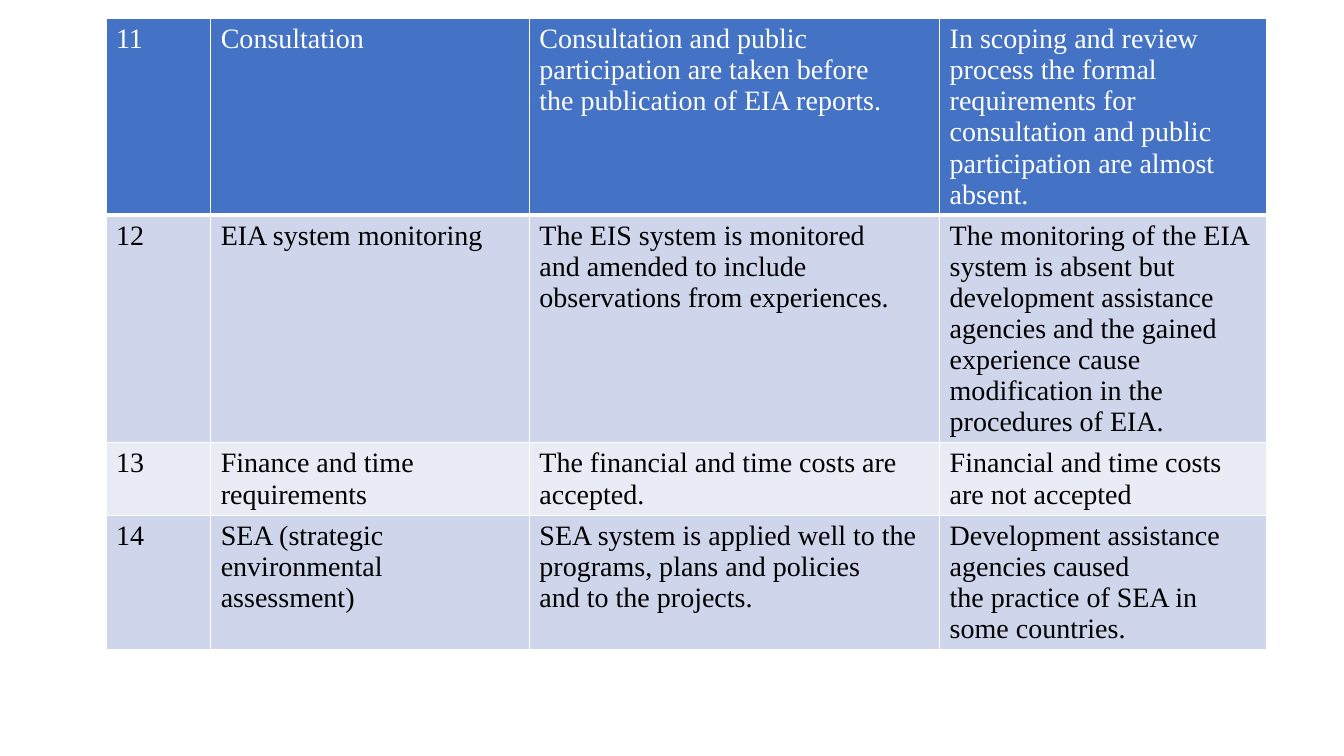
from pptx import Presentation
from pptx.dml.color import RGBColor
from pptx.oxml.ns import qn
from pptx.util import Cm, Pt
from lxml.etree import SubElement

COLOURS = {
    "header": "4472C4",
    "dark_band": "CFD5EA",
    "light_band": "E9EBF5",
    "white": "FFFFFF",
    "black": "000000",
}
FONT = "Times New Roman"
COLUMN_WIDTHS = [2.64, 8.03, 10.34, 8.23]
ROW_HEIGHTS = [4.9, 5.7, 1.8, 3.35]
ROWS = [
    [
        ["11"],
        ["Consultation"],
        ["Consultation and public", "participation are taken before",
         "the publication of EIA reports."],
        ["In scoping and review process the formal",
         "requirements for consultation and public",
         "participation are almost absent."],
    ],
    [
        ["12"],
        ["EIA system monitoring"],
        ["The EIS system is monitored", "and amended to include",
         "observations from experiences."],
        ["The monitoring of the EIA system is absent but development assistance",
         "agencies and the gained experience cause",
         "modification in the procedures of EIA."],
    ],
    [
        ["13"],
        ["Finance and time", "requirements"],
        ["The financial and time costs are", "accepted."],
        ["Financial and time costs are not accepted"],
    ],
    [
        ["14"],
        ["SEA (strategic", "environmental", "assessment)"],
        ["SEA system is applied well to the", "programs, plans and policies",
         "and to the projects."],
        ["Development assistance agencies caused",
         "the practice of SEA in some countries."],
    ],
]


def colour(name):
    """Return the named colour as an RGBColor."""
    return RGBColor.from_string(COLOURS[name])


def write_paragraphs(cell, lines, text_colour):
    """Write each line as its own paragraph in the cell."""
    text_frame = cell.text_frame
    for index, line in enumerate(lines):
        paragraph = text_frame.add_paragraph() if index else text_frame.paragraphs[0]
        run = paragraph.add_run()
        run.text = line
        run.font.name = FONT
        run.font.size = Pt(20)
        run.font.bold = False
        run.font.color.rgb = colour(text_colour)


def set_borders(cell, top, bottom):
    """Draw white borders, with top and bottom widths in points."""
    properties = cell._tc.get_or_add_tcPr()
    widths = {"a:lnL": 1, "a:lnR": 1, "a:lnT": top, "a:lnB": bottom}
    for tag, width in widths.items():
        line = SubElement(properties, qn(tag), w=str(Pt(width)))
        fill = SubElement(line, qn("a:solidFill"))
        SubElement(fill, qn("a:srgbClr"), val=COLOURS["white"])


def style_cell(cell, row_index):
    """Give the cell the borders and fill of its row."""
    set_borders(cell, 3 if row_index == 1 else 1, 3 if row_index == 0 else 1)
    band = "dark_band" if row_index % 2 else "light_band"
    cell.fill.solid()
    cell.fill.fore_color.rgb = colour(band if row_index else "header")


def add_comparison_table(slide):
    """Add the table that compares the EIA practices."""
    shape = slide.shapes.add_table(
        len(ROWS), len(COLUMN_WIDTHS), Cm(2.67), Cm(0.47),
        Cm(sum(COLUMN_WIDTHS)), Cm(sum(ROW_HEIGHTS)))
    table = shape.table
    for column, width in zip(table.columns, COLUMN_WIDTHS):
        column.width = Cm(width)
    for row_index, (row, height) in enumerate(zip(table.rows, ROW_HEIGHTS)):
        row.height = Cm(height)
        for cell, lines in zip(row.cells, ROWS[row_index]):
            style_cell(cell, row_index)
            write_paragraphs(cell, lines, "black" if row_index else "white")


def main():
    """Build the slide and save the presentation."""
    presentation = Presentation()
    presentation.slide_width = Cm(33.87)
    presentation.slide_height = Cm(19.05)
    slide = presentation.slides.add_slide(presentation.slide_layouts[6])
    add_comparison_table(slide)
    presentation.save("out.pptx")


if __name__ == "__main__":
    main()
